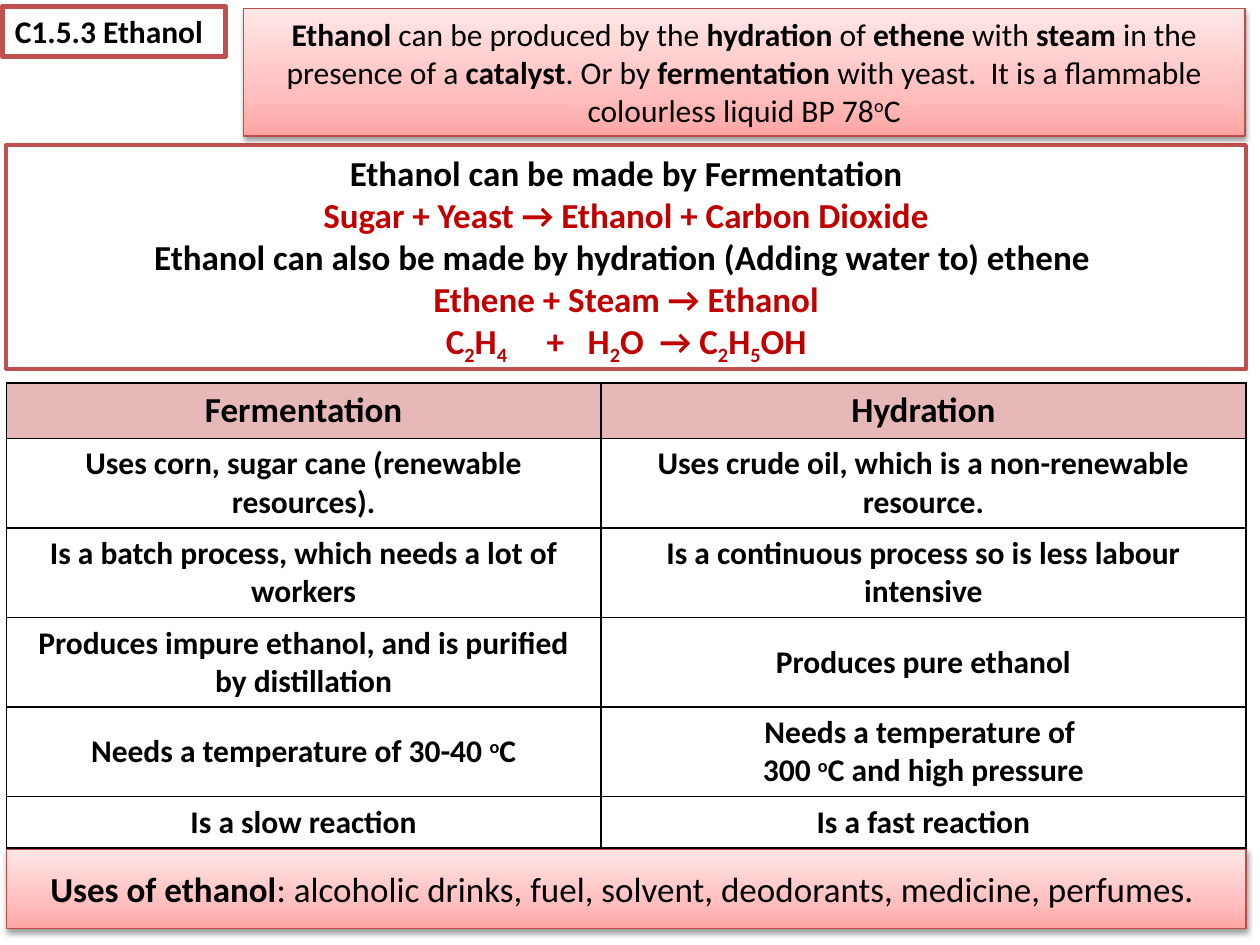
"""Build a revision slide on making and using ethanol."""
from copy import deepcopy
from dataclasses import dataclass

from lxml import etree
from pptx import Presentation
from pptx.dml.color import RGBColor
from pptx.enum.shapes import MSO_SHAPE
from pptx.enum.text import MSO_ANCHOR, PP_ALIGN
from pptx.oxml.ns import qn
from pptx.util import Pt

RECTANGLE = MSO_SHAPE.RECTANGLE
LEFT, CENTER = PP_ALIGN.LEFT, PP_ALIGN.CENTER
TOP, MIDDLE = MSO_ANCHOR.TOP, MSO_ANCHOR.MIDDLE
BLACK, WHITE, RED = "000000", "FFFFFF", "C00000"
BORDER, GLOSS_BORDER, HEADER = "C0504D", "BF4C48", "E6B9B8"
GLOSS = ((0, "FFA6A5"), (0.35, "FFC0BF"), (1, "FFE7E7"))
SUBSCRIPT, SUPERSCRIPT = -25, 30


@dataclass(frozen=True)
class Span:
    text: str
    bold: bool = True
    baseline: int = 0
    gap: float = 0


@dataclass(frozen=True)
class Line:
    spans: tuple[Span, ...]
    color: str = BLACK


@dataclass(frozen=True)
class Panel:
    left: float
    top: float
    width: float
    height: float
    lines: tuple[Line, ...]
    size: float
    border: float = 0.75
    glossy: bool = False
    align: PP_ALIGN = CENTER
    anchor: MSO_ANCHOR = TOP
    wrap: bool = True


def line(*parts: str | Span, color: str = BLACK, bold: bool = True) -> Line:
    """Make a line in which plain strings become spans."""
    return Line(tuple(part if isinstance(part, Span) else Span(part, bold) for part in parts), color)


def sub(text: str) -> Span:
    """Make a subscript span."""
    return Span(text, baseline=SUBSCRIPT)


def degree(bold: bool = True) -> Span:
    """Make the raised degree letter."""
    return Span("o", bold, SUPERSCRIPT)


def rgb(color: str) -> RGBColor:
    """Turn a hex string into a colour."""
    return RGBColor.from_string(color)


def write_text(frame, lines, *, size: float, align=CENTER, font: str = "Calibri") -> None:
    """Write formatted lines into a text frame."""
    for index, content in enumerate(lines):
        para = frame.add_paragraph() if index else frame.paragraphs[0]
        para.alignment = align
        for span in content.spans:
            run = para.add_run()
            run.text = span.text
            run.font.name, run.font.size, run.font.bold = font, Pt(size), span.bold
            run.font.color.rgb = rgb(content.color)
            properties = run._r.get_or_add_rPr()
            if span.baseline:
                properties.set("baseline", str(span.baseline * 1000))
            if span.gap:
                properties.set("spc", str(int(span.gap * 100)))


def add_gloss(shape) -> None:
    """Give a shape the pink gradient and its soft shadow."""
    shape.fill.gradient()
    shape.fill.gradient_angle = 90
    properties = shape._element.spPr
    stops = properties.find(".//" + qn("a:gsLst"))
    stops.append(deepcopy(stops[0]))
    for stop, (position, color) in zip(shape.fill.gradient_stops, GLOSS):
        stop.position, stop.color.rgb = position, rgb(color)
    shadow = etree.SubElement(properties.find(qn("a:effectLst")), qn("a:outerShdw"),
                              blurRad=str(Pt(3.1)), dist=str(Pt(1.6)), dir="5400000", rotWithShape="0")
    tone = etree.SubElement(shadow, qn("a:srgbClr"), val=BLACK)
    etree.SubElement(tone, qn("a:alpha"), val="38000")


def add_panel(page, panel: Panel) -> None:
    """Draw one framed text panel."""
    box = page.shapes.add_shape(RECTANGLE, Pt(panel.left), Pt(panel.top), Pt(panel.width), Pt(panel.height))
    box.shadow.inherit = False
    if panel.glossy:
        add_gloss(box)
    else:
        box.fill.solid()
        box.fill.fore_color.rgb = rgb(WHITE)
    box.line.color.rgb = rgb(GLOSS_BORDER if panel.glossy else BORDER)
    box.line.width = Pt(panel.border)
    frame = box.text_frame
    frame.word_wrap, frame.vertical_anchor = panel.wrap, panel.anchor
    write_text(frame, panel.lines, size=panel.size, align=panel.align)


def format_cell(cell, color: str) -> None:
    """Give a cell black borders, a fill and middle anchoring."""
    properties = cell._tc.get_or_add_tcPr()
    for side in ("lnL", "lnR", "lnT", "lnB"):
        edge = etree.SubElement(properties, qn(f"a:{side}"), w=str(Pt(1)))
        etree.SubElement(etree.SubElement(edge, qn("a:solidFill")), qn("a:srgbClr"), val=BLACK)
    cell.fill.solid()
    cell.fill.fore_color.rgb = rgb(color)
    cell.vertical_anchor = MIDDLE


def add_comparison(page, rows, widths, heights, left: float, top: float) -> None:
    """Draw the table that compares the two processes."""
    table = page.shapes.add_table(len(rows), len(widths), Pt(left), Pt(top),
                                  Pt(sum(widths)), Pt(sum(heights))).table
    table.first_row = table.horz_banding = False
    for column, width in zip(table.columns, widths):
        column.width = Pt(width)
    for index, (row, height) in enumerate(zip(rows, heights)):
        table.rows[index].height = Pt(height)
        for cell, lines in zip(table.rows[index].cells, row):
            format_cell(cell, WHITE if index else HEADER)
            write_text(cell.text_frame, lines, size=18 if index else 20)


PANELS = (
    Panel(1.4, 3.6, 127.4, 28.8, (line("C1.5.3 Ethanol"),), 18, 3, align=LEFT, wrap=False),
    Panel(3.6, 82.8, 708.5, 128.2, (
        line("Ethanol can be made by Fermentation"),
        line("Sugar + Yeast → Ethanol + Carbon Dioxide", color=RED),
        line("Ethanol can also be made by hydration (Adding water to) ethene "),
        line("Ethene + Steam → Ethanol", color=RED),
        line("C", sub("2"), "H", sub("4"), Span(" ", gap=18), "+", Span(" ", gap=9), "H", sub("2"),
             "O", Span(" ", gap=4.5), "→ C", sub("2"), "H", sub("5"), "OH", color=RED),
    ), 20, 2),
    Panel(139, 5, 572.4, 72.7, (
        line(Span("Ethanol"), " can be produced by the ", Span("hydration"), " of ", Span("ethene"),
             " with ", Span("steam"), " in the presence of a ", Span("catalyst"), ". Or by ",
             Span("fermentation"), " with yeast.", Span(" ", False, gap=4),
             "It is a flammable colourless liquid BP 78", degree(False), "C", bold=False),
    ), 18, glossy=True),
    Panel(3.6, 485.3, 708.5, 45.4, (
        line(Span("Uses of ethanol"),
             ": alcoholic drinks, fuel, solvent, deodorants, medicine, perfumes. ", bold=False),
    ), 20, glossy=True, anchor=MIDDLE),
)
ROWS = (
    ((line("Fermentation"),), (line("Hydration"),)),
    ((line("Uses corn, sugar cane (renewable resources)."),),
     (line("Uses crude oil, which is a non-renewable resource."),)),
    ((line("Is a batch process, which needs a lot of workers"),),
     (line("Is a continuous process so is less labour intensive"),)),
    ((line("Produces impure ethanol, and is purified by distillation"),),
     (line("Produces pure ethanol"),)),
    ((line("Needs a temperature of 30-40 ", degree(), "C"),),
     (line("Needs a temperature of "), line("300 ", degree(), "C and high pressure"))),
    ((line("Is a slow reaction"),), (line("Is a fast reaction"),)),
)


def main() -> None:
    """Build and save the deck."""
    deck = Presentation()
    deck.slide_width, deck.slide_height = Pt(720), Pt(540)
    page = deck.slides.add_slide(deck.slide_layouts[6])
    *upper, uses = PANELS
    for panel in upper:
        add_panel(page, panel)
    add_comparison(page, ROWS, (339.8, 368.6), (31.4, *[50.3] * 4, 28.8), 3.6, 218.9)
    add_panel(page, uses)
    deck.save("out.pptx")


if __name__ == "__main__":
    main()
